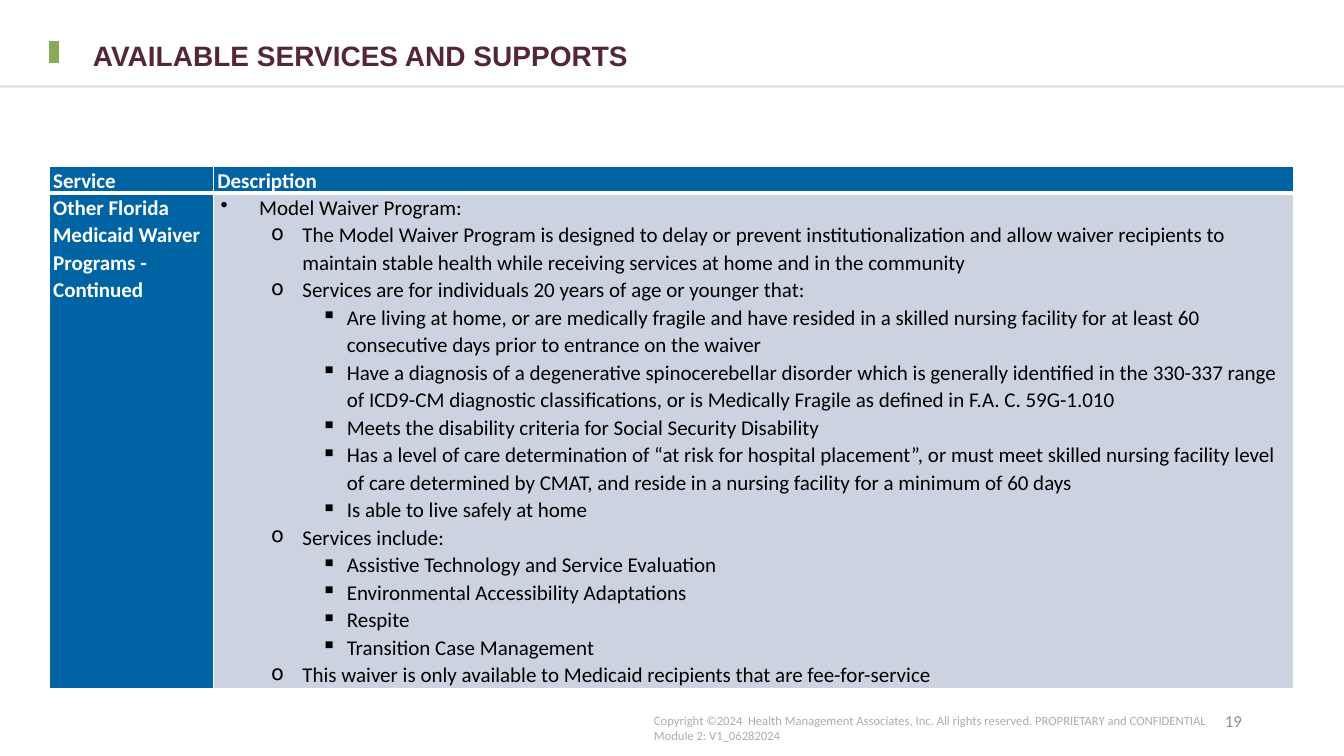
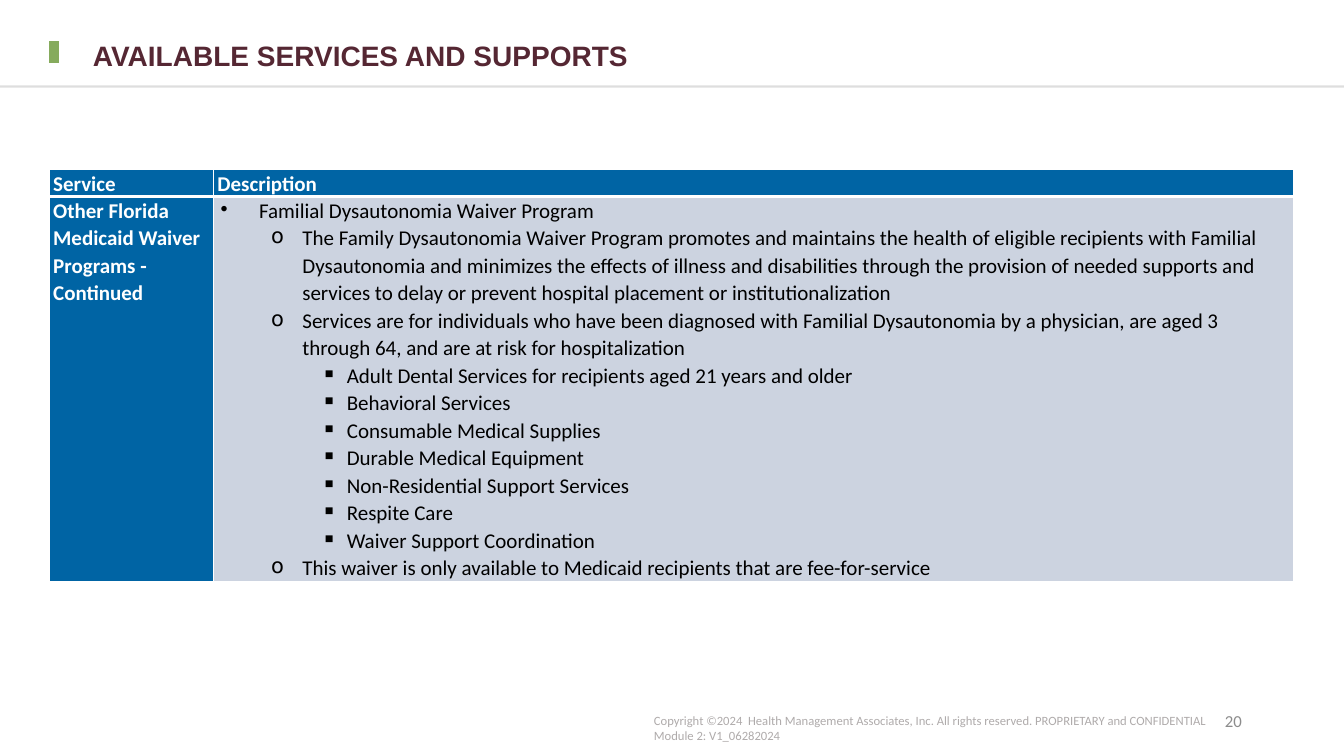
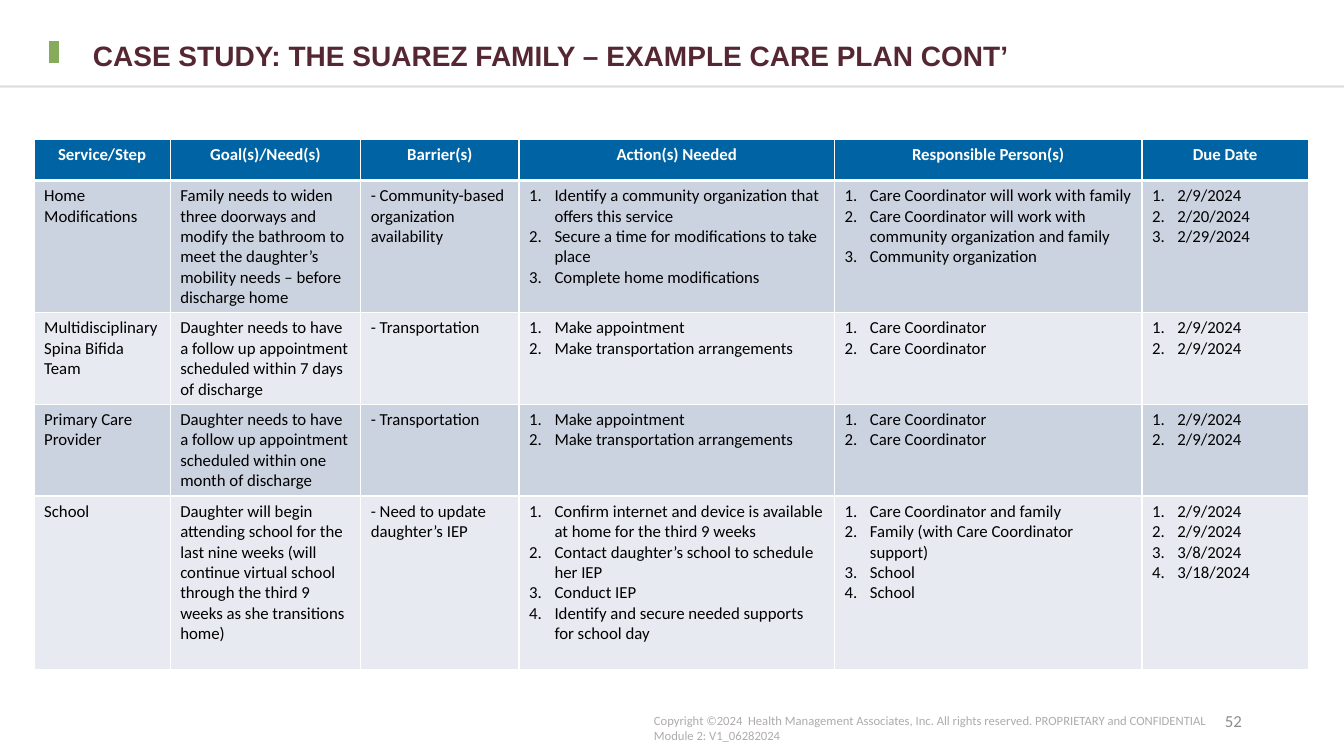
from lxml.etree import SubElement
from pptx import Presentation
from pptx.dml.color import RGBColor
from pptx.enum.shapes import MSO_CONNECTOR as Connector
from pptx.enum.text import MSO_ANCHOR as Anchor, PP_ALIGN as Align
from pptx.oxml import parse_xml
from pptx.oxml.ns import nsdecls, qn
from pptx.util import Cm, Pt

WHITE = RGBColor(0xFF, 0xFF, 0xFF)
BLACK = RGBColor(0x00, 0x00, 0x00)
BLUE = RGBColor(0x00, 0x64, 0xA4)
BAND_DARK = RGBColor(0xCC, 0xD3, 0xE0)
BAND_LIGHT = RGBColor(0xE7, 0xEA, 0xF0)
GREEN = RGBColor(0x86, 0xAB, 0x5D)
MAROON = RGBColor(0x55, 0x27, 0x33)
FOOTER_GRAY = RGBColor(0xAF, 0xAB, 0xAB)
NUMBER_GRAY = RGBColor(0x8C, 0x8C, 0x8C)

WIDTH, HEIGHT = 33.87, 19.05
FOOTER = [
    "Copyright ©2024  Health Management Associates, Inc. All rights reserved. "
    "PROPRIETARY and CONFIDENTIAL",
    "Module 2: V1_06282024",
]

# List styles: level, left indent, hanging indent, bullet element, its attribute
LIST_STYLES = {
    "•": (0, 0.97, 0.97, "a:buChar", ("char", "•")),
    "o": (1, 2.06, 0.79, "a:buChar", ("char", "o")),
    "▪": (2, 3.18, 0.64, "a:buChar", ("char", "▪")),
    "1.": (0, 0.64, 0.64, "a:buAutoNum", ("type", "arabicPeriod")),
}


class Deck:
    """Holds the shared style and the current slide."""

    def __init__(self):
        self.deck = Presentation()
        self.deck.slide_width, self.deck.slide_height = Cm(WIDTH), Cm(HEIGHT)
        self.page = None

    def new_page(self, title, number):
        """Start a slide with its title, rules, footer and number."""
        self.page = self.deck.slides.add_slide(self.deck.slide_layouts[5])
        self.text(16.23, 17.83, 14.58, 1.02, FOOTER, size=9, color=FOOTER_GRAY)
        rule = self.line(0, 2.18, WIDTH, 2.18, BLACK, 1.75)
        color = rule._element.spPr.find(".//" + qn("a:srgbClr"))
        SubElement(color, qn("a:alpha"), val="12000")
        self.line(1.37, 1.04, 1.37, 1.6, GREEN, 7)
        self.title(title)
        box = self.text(23.93, 17.65, 7.62, 1.02, [str(number)], size=12,
                        color=NUMBER_GRAY, align=Align.RIGHT)
        box.text_frame.vertical_anchor = Anchor.MIDDLE

    def title(self, text):
        box = self.page.shapes.title
        box.left, box.top, box.width, box.height = Cm(2.34), Cm(1.07), Cm(29.21), Cm(0.76)
        frame = box.text_frame
        frame.margin_left = frame.margin_right = frame.margin_top = frame.margin_bottom = 0
        frame.vertical_anchor = Anchor.MIDDLE
        self.paragraphs(frame, [text], size=20, color=MAROON, bold=True, font="Arial",
                        spacing=0.9)

    def line(self, x1, y1, x2, y2, color, width):
        line = self.page.shapes.add_connector(
            Connector.STRAIGHT, Cm(x1), Cm(y1), Cm(x2), Cm(y2))
        line.line.color.rgb = color
        line.line.width = Pt(width)
        SubElement(line._element.spPr, qn("a:effectLst"))
        return line

    def text(self, left, top, width, height, items, **style):
        box = self.page.shapes.add_textbox(Cm(left), Cm(top), Cm(width), Cm(height))
        box.text_frame.word_wrap = True
        self.paragraphs(box.text_frame, items, **style)
        return box

    def paragraphs(self, frame, items, size, color, bold=False, font="Calibri",
                   align=Align.LEFT, spacing=None):
        """Add one paragraph per item: a string or a (list style, string) pair."""
        for index, item in enumerate(items):
            marker, text = item if isinstance(item, tuple) else (None, item)
            para = frame.add_paragraph() if index else frame.paragraphs[0]
            para.alignment = align
            if spacing:
                para.line_spacing = spacing
            if marker:
                self.bullet(para, marker)
            span = para.add_run()
            span.text = text
            span.font.name, span.font.size = font, Pt(size)
            span.font.bold, span.font.color.rgb = bold, color

    def bullet(self, para, marker):
        level, left, hanging, tag, (name, value) = LIST_STYLES[marker]
        para.level = level
        properties = para._p.get_or_add_pPr()
        properties.set("marL", str(Cm(left)))
        properties.set("indent", str(-Cm(hanging)))
        SubElement(properties, qn(tag)).set(name, value)

    def table(self, left, top, widths, heights):
        frame = self.page.shapes.add_table(
            len(heights), len(widths), Cm(left), Cm(top), Cm(sum(widths)), Cm(sum(heights)))
        table = frame.table
        table.first_row = table.horz_banding = False
        for column, width in zip(table.columns, widths):
            column.width = Cm(width)
        for row, height in zip(table.rows, heights):
            row.height = Cm(height)
        return table

    def cell(self, table, row, column, items, fill, margin=None, **style):
        cell = table.cell(row, column)
        cell.fill.solid()
        cell.fill.fore_color.rgb = fill
        if margin is not None:
            cell.margin_left = cell.margin_right = Cm(margin)
            cell.margin_top = cell.margin_bottom = 0
        self.borders(cell, top=3 if row == 1 else 1, bottom=1 if row else 3)
        self.paragraphs(cell.text_frame, items, **style)

    def borders(self, cell, top, bottom):
        """White cell borders, which must come before the fill."""
        properties = cell._tc.get_or_add_tcPr()
        sides = (("lnL", 1), ("lnR", 1), ("lnT", top), ("lnB", bottom))
        for index, (side, width) in enumerate(sides):
            properties.insert(index, parse_xml(
                f'<a:{side} {nsdecls("a")} w="{Pt(width)}"><a:solidFill>'
                f'<a:srgbClr val="{WHITE}"/></a:solidFill></a:{side}>'))

    def service_page(self, number, top, body_height, description):
        """Slide with one service and its nested description."""
        self.new_page("AVAILABLE SERVICES AND SUPPORTS", number)
        table = self.table(1.24, top, [4.14, 27.23], [0.64, body_height])
        style = {"size": 15, "spacing": 1.07}
        labels = [(0, 0, "Service"), (0, 1, "Description"),
                  (1, 0, "Other Florida Medicaid Waiver Programs - Continued")]
        for row, column, label in labels:
            self.cell(table, row, column, [label], BLUE, margin=0.1,
                      color=WHITE, bold=True, **style)
        self.cell(table, 1, 1, description, BAND_DARK, margin=0.18, color=BLACK, **style)

    def plan_page(self, number, title, headers, rows):
        """Slide with the care plan; lists in a row become numbered lists."""
        self.new_page(title, number)
        table = self.table(0.86, 3.51, [3.43, 4.8, 3.99, 7.95, 7.75, 4.19],
                           [1.04, 3.33, 2.31, 2.31, 4.37])
        for column, header in enumerate(headers):
            self.cell(table, 0, column, [header], BLUE, size=12, color=WHITE,
                      bold=True, align=Align.CENTER)
        for index, row in enumerate(rows, start=1):
            fill = BAND_DARK if index % 2 else BAND_LIGHT
            for column, value in enumerate(row):
                items = [value] if isinstance(value, str) else [("1.", text) for text in value]
                self.cell(table, index, column, items, fill, size=12, color=BLACK)


# Content
FEE_FOR_SERVICE = ("o", "This waiver is only available to Medicaid recipients that are "
                        "fee-for-service")
MODEL_WAIVER = [
    ("•", "Model Waiver Program:"),
    ("o", "The Model Waiver Program is designed to delay or prevent institutionalization and "
          "allow waiver recipients to maintain stable health while receiving services at home "
          "and in the community"),
    ("o", "Services are for individuals 20 years of age or younger that:"),
    ("▪", "Are living at home, or are medically fragile and have resided in a skilled nursing "
          "facility for at least 60 consecutive days prior to entrance on the waiver"),
    ("▪", "Have a diagnosis of a degenerative spinocerebellar disorder which is generally "
          "identified in the 330-337 range of ICD9-CM diagnostic classifications, or is "
          "Medically Fragile as defined in F.A. C. 59G-1.010"),
    ("▪", "Meets the disability criteria for Social Security Disability"),
    ("▪", "Has a level of care determination of “at risk for hospital placement”, or must meet "
          "skilled nursing facility level of care determined by CMAT, and reside in a nursing "
          "facility for a minimum of 60 days"),
    ("▪", "Is able to live safely at home"),
    ("o", "Services include:"),
    ("▪", "Assistive Technology and Service Evaluation"),
    ("▪", "Environmental Accessibility Adaptations"),
    ("▪", "Respite"),
    ("▪", "Transition Case Management"),
    FEE_FOR_SERVICE,
]
FAMILIAL_WAIVER = [
    ("•", "Familial Dysautonomia Waiver Program"),
    ("o", "The Family Dysautonomia Waiver Program promotes and maintains the health of eligible "
          "recipients with Familial Dysautonomia and minimizes the effects of illness and "
          "disabilities through the provision of needed supports and services to delay or "
          "prevent hospital placement or institutionalization"),
    ("o", "Services are for individuals who have been diagnosed with Familial Dysautonomia by a "
          "physician, are aged 3 through 64, and are at risk for hospitalization"),
    ("▪", "Adult Dental Services for recipients aged 21 years and older"),
    ("▪", "Behavioral Services"),
    ("▪", "Consumable Medical Supplies"),
    ("▪", "Durable Medical Equipment"),
    ("▪", "Non-Residential Support Services"),
    ("▪", "Respite Care"),
    ("▪", "Waiver Support Coordination"),
    FEE_FOR_SERVICE,
]
PLAN_HEADERS = ["Service/Step", "Goal(s)/Need(s)", "Barrier(s)", "Action(s) Needed",
                "Responsible Person(s)", "Due Date"]
# Barrier, actions, people and dates shared by both medical visits
VISIT = ["- Transportation", ["Make appointment", "Make transportation arrangements"],
         ["Care Coordinator"] * 2, ["2/9/2024"] * 2]
PLAN_ROWS = [
    ["Home Modifications",
     "Family needs to widen three doorways and modify the bathroom to meet the daughter’s "
     "mobility needs – before discharge home",
     "- Community-based organization availability",
     ["Identify a community organization that offers this service",
      "Secure a time for modifications to take place", "Complete home modifications"],
     ["Care Coordinator will work with family",
      "Care Coordinator will work with community organization and family",
      "Community organization"],
     ["2/9/2024", "2/20/2024", "2/29/2024"]],
    ["Multidisciplinary Spina Bifida Team",
     "Daughter needs to have a follow up appointment scheduled within 7 days of discharge",
     *VISIT],
    ["Primary Care Provider",
     "Daughter needs to have a follow up appointment scheduled within one month of discharge",
     *VISIT],
    ["School",
     "Daughter will begin attending school for the last nine weeks (will continue virtual "
     "school through the third 9 weeks as she transitions home)",
     "- Need to update daughter’s IEP",
     ["Confirm internet and device is available at home for the third 9 weeks",
      "Contact daughter’s school to schedule her IEP", "Conduct IEP",
      "Identify and secure needed supports for school day"],
     ["Care Coordinator and family", "Family (with Care Coordinator support)",
      "School", "School"],
     ["2/9/2024", "2/9/2024", "3/8/2024", "3/18/2024"]],
]


def main():
    show = Deck()
    show.service_page(19, 4.19, 12.47, MODEL_WAIVER)
    show.service_page(20, 4.27, 9.7, FAMILIAL_WAIVER)
    show.plan_page(52, "CASE STUDY: THE SUAREZ FAMILY – EXAMPLE CARE PLAN CONT’",
                   PLAN_HEADERS, PLAN_ROWS)
    show.deck.save("out.pptx")


if __name__ == "__main__":
    main()
